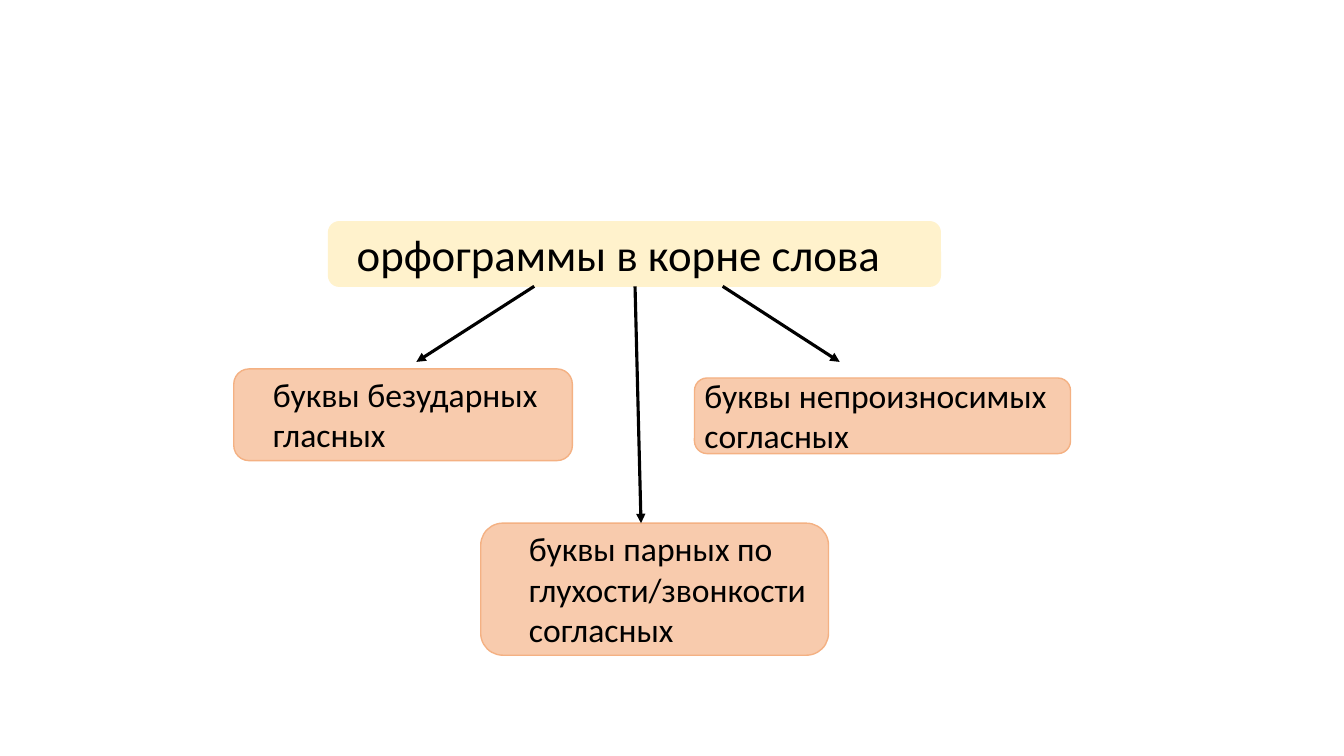
from lxml import etree
from pptx import Presentation
from pptx.dml.color import RGBColor
from pptx.enum.shapes import MSO_CONNECTOR, MSO_SHAPE
from pptx.enum.text import MSO_ANCHOR, MSO_AUTO_SIZE, PP_ALIGN
from pptx.oxml.ns import qn
from pptx.util import Pt

BLACK = RGBColor(0x00, 0x00, 0x00)
CREAM = RGBColor(0xFF, 0xF2, 0xCC)
PEACH = RGBColor(0xF8, 0xCB, 0xAD)
ORANGE = RGBColor(0xF4, 0xB1, 0x83)
FONT = "Calibri"

# Text, size, frame (left, top, width, height), text area, fill, line
ROOT = ("орфограммы в корне слова", 32,
        (234.7, 158.4, 437, 46.1), (247.7, 158.4, 410.4, 46.1), CREAM, CREAM)
BRANCHES = [
    ("буквы парных по глухости/звонкости согласных", 24,
     (343.4, 373.7, 248.4, 94.3), (370.8, 373.7, 247, 94.3), PEACH, ORANGE),
    ("буквы непроизносимых согласных", 24,
     (496.1, 270, 268.6, 54), (496.1, 264.2, 280.8, 65.5), PEACH, ORANGE),
    ("буквы безударных гласных", 24,
     (167, 263.5, 241.9, 65.5), (187.9, 263.5, 247, 65.5), PEACH, ORANGE),
]

# Arrow start and end points
ARROWS = [
    ((381.6, 204.5), (297.4, 258.5)),
    ((516.2, 204.5), (599.8, 258.5)),
    ((453.6, 204.5), (457.9, 373.7)),
]


def add_frame(shapes, box, fill, line):
    sp = shapes.add_shape(MSO_SHAPE.ROUNDED_RECTANGLE, *map(Pt, box))
    sp.shadow.inherit = False
    sp.fill.solid()
    sp.fill.fore_color.rgb = fill
    sp.line.color.rgb = line
    sp.line.width = Pt(1)


def add_text(shapes, text, size, box):
    tf = shapes.add_textbox(*map(Pt, box)).text_frame
    tf.word_wrap = True
    tf.auto_size = MSO_AUTO_SIZE.SHAPE_TO_FIT_TEXT
    tf.vertical_anchor = MSO_ANCHOR.TOP
    p = tf.paragraphs[0]
    p.alignment = PP_ALIGN.LEFT
    r = p.add_run()
    r.text = text
    r.font.name = FONT
    r.font.size = Pt(size)
    r.font.color.rgb = BLACK


def add_node(shapes, text, size, frame, text_area, fill, line):
    group = shapes.add_group_shape()
    add_frame(group.shapes, frame, fill, line)
    add_text(group.shapes, text, size, text_area)


def add_arrow(shapes, start, end):
    cxn = shapes.add_connector(MSO_CONNECTOR.STRAIGHT, *map(Pt, start + end))
    cxn.line.color.rgb = BLACK
    cxn.line.width = Pt(2.25)
    ln = cxn.line._get_or_add_ln()
    etree.SubElement(ln, qn("a:tailEnd"), type="triangle")
    etree.SubElement(cxn._element.spPr, qn("a:effectLst"))


def main():
    prs = Presentation()
    prs.slide_width, prs.slide_height = Pt(960), Pt(540)
    s = prs.slides.add_slide(prs.slide_layouts[6])

    # Root topic and its three branches
    for node in [ROOT] + BRANCHES:
        add_node(s.shapes, *node)

    # Arrows from the root to the branches
    for start, end in ARROWS:
        add_arrow(s.shapes, start, end)

    prs.save("out.pptx")


if __name__ == "__main__":
    main()
